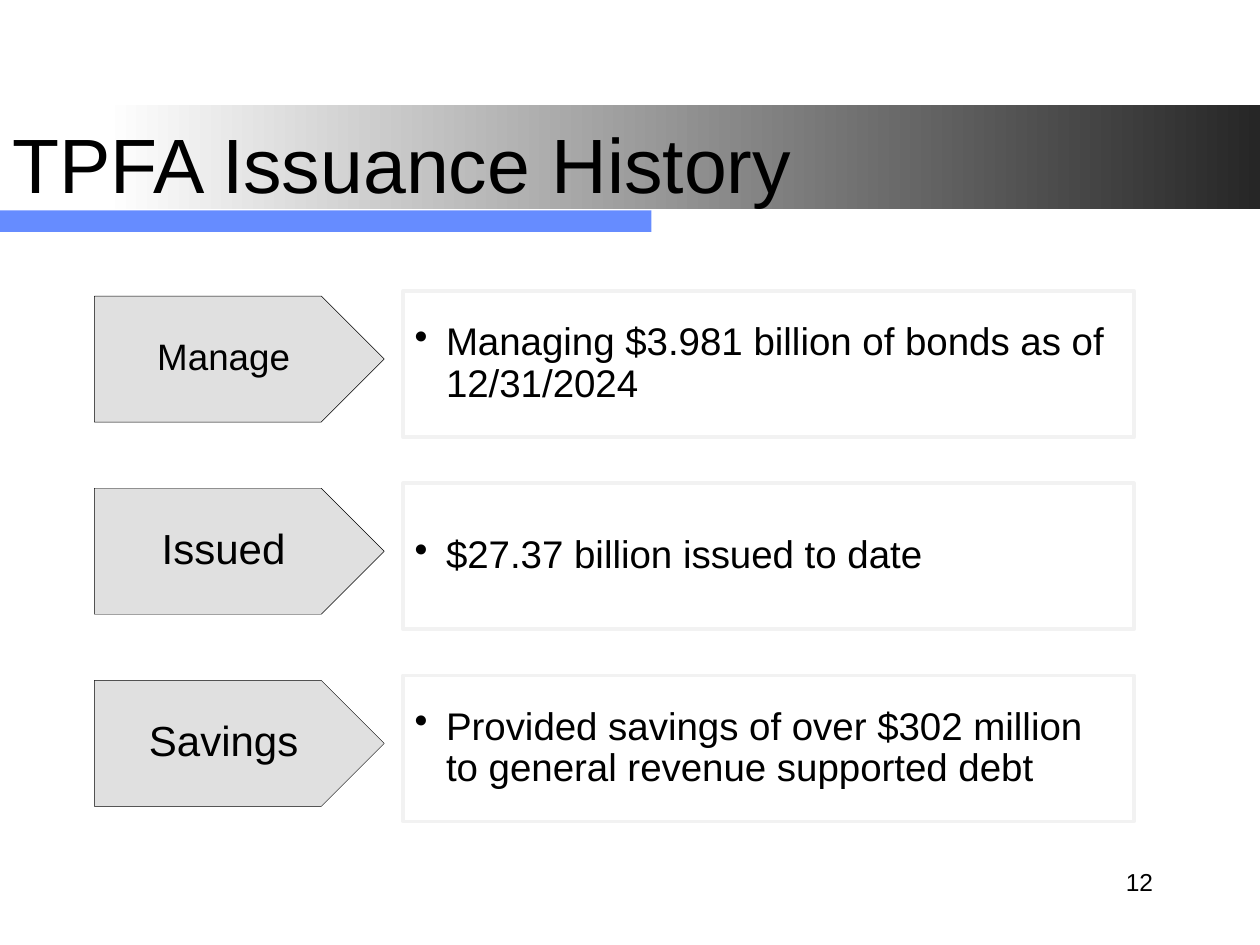
from dataclasses import dataclass

from lxml import etree
from pptx import Presentation
from pptx import util as u
from pptx.dml.color import RGBColor
from pptx.enum import shapes, text
from pptx.oxml import ns


@dataclass(frozen=True)
class Theme:
    font: str = "Arial"
    ink: RGBColor = RGBColor(0, 0, 0)
    band_start: RGBColor = RGBColor(0xFF, 0xFF, 0xFF)
    band_end: RGBColor = RGBColor(0x26, 0x26, 0x26)
    accent: RGBColor = RGBColor(0x33, 0x66, 0xFF)
    arrow: RGBColor = RGBColor(0x86, 0x86, 0x86)
    frame: RGBColor = RGBColor(0xF2, 0xF2, 0xF2)
    title_size: int = 44
    detail_size: int = 22
    number_size: int = 14


THEME = Theme()

# Label, label size, detail
HISTORY = [
    ("Manage", 21, "Managing $3.981 billion of bonds as of 12/31/2024"),
    ("Issued", 24, "$27.37 billion issued to date"),
    ("Savings", 24, "Provided savings of over $302 million to general revenue supported debt"),
]


def add_box(slide, preset, left, top, width, height):
    shape = slide.shapes.add_shape(
        preset, u.Inches(left), u.Inches(top), u.Inches(width), u.Inches(height))
    shape.shadow.inherit = False
    shape.line.fill.background()
    return shape


def fill_translucent(shape, color, opacity):
    shape.fill.solid()
    shape.fill.fore_color.rgb = color
    color_node = shape.element.spPr.find(ns.qn("a:solidFill"))[0]
    etree.SubElement(color_node, ns.qn("a:alpha"), val=str(opacity * 1000))


def set_line(shape, color, width):
    shape.line.color.rgb = color
    shape.line.width = u.Pt(width)


def write(shape, words, size, align, insets=(0.1, 0.05, 0.1, 0.05), wrap=True):
    frame = shape.text_frame
    frame.word_wrap = wrap
    frame.auto_size = text.MSO_AUTO_SIZE.NONE
    frame.vertical_anchor = text.MSO_ANCHOR.MIDDLE
    (frame.margin_left, frame.margin_top,
     frame.margin_right, frame.margin_bottom) = map(u.Inches, insets)
    paragraph = frame.paragraphs[0]
    paragraph.text = words
    paragraph.alignment = align
    paragraph.font.name = THEME.font
    paragraph.font.size = u.Pt(size)
    paragraph.font.color.rgb = THEME.ink
    return paragraph


def add_bullet(paragraph, indent):
    properties = paragraph._p.get_or_add_pPr()
    properties.set("marL", str(u.Inches(indent)))
    properties.set("indent", str(-u.Inches(indent)))
    etree.SubElement(properties, ns.qn("a:buChar"), char="•")


def add_header(slide, left, top, width, height):
    # Gradient band
    band = add_box(slide, shapes.MSO_SHAPE.RECTANGLE, 0.83, 0.83, 9.17, 0.83)
    band.fill.gradient()
    band.fill.gradient_angle = 0
    for stop, color in zip(band.fill.gradient_stops, (THEME.band_start, THEME.band_end)):
        stop.color.rgb = color

    # Accent bar
    bar = add_box(slide, shapes.MSO_SHAPE.RECTANGLE, 0, 1.67, 5.17, 0.17)
    fill_translucent(bar, THEME.accent, 75)

    # Title, raised above the band
    title = slide.shapes.title
    title.left, title.top = u.Inches(left), u.Inches(top)
    title.width, title.height = u.Inches(width), u.Inches(height)
    write(title, "TPFA Issuance History", THEME.title_size, text.PP_ALIGN.LEFT)
    title.element.getparent().append(title.element)


def add_history_row(slide, left, top, width, height, label, label_size, detail):
    arrow_width, arrow_height, gap = 2.3, 1, 0.15

    # Framed detail
    detail_left = arrow_width + gap
    frame = add_box(slide, shapes.MSO_SHAPE.RECTANGLE,
                    left + detail_left, top, width - detail_left, height)
    frame.fill.background()
    set_line(frame, THEME.frame, 2)
    paragraph = write(frame, detail, THEME.detail_size, text.PP_ALIGN.LEFT,
                      (0.09, 0.1, 0.15, 0.1))
    paragraph.line_spacing = 0.9
    add_bullet(paragraph, 0.25)

    # Arrow label
    arrow = add_box(slide, shapes.MSO_SHAPE.PENTAGON,
                    left, top + 0.04, arrow_width, arrow_height)
    fill_translucent(arrow, THEME.arrow, 25)
    set_line(arrow, THEME.ink, 0.25)
    paragraph = write(arrow, label, label_size, text.PP_ALIGN.CENTER,
                      (0.21, 0.14, 0.21, 0.14))
    paragraph.line_spacing = 0.9


def add_history(slide, left, top, width, height):
    row_height = 1.16
    pitch = (height - row_height) / (len(HISTORY) - 1)
    for index, row in enumerate(HISTORY):
        add_history_row(slide, left, top + index * pitch, width, row_height, *row)


def add_page_number(slide, left, top, width, height):
    box = slide.shapes.add_textbox(
        u.Inches(left), u.Inches(top), u.Inches(width), u.Inches(height))
    write(box, "12", THEME.number_size, text.PP_ALIGN.RIGHT, wrap=False)


def main():
    presentation = Presentation()
    presentation.slide_width = u.Inches(10)
    presentation.slide_height = u.Inches(7.5)
    slide = presentation.slides.add_slide(presentation.slide_layouts.get_by_name("Title Only"))
    add_header(slide, 0, 0.67, 9.25, 1.25)
    add_page_number(slide, 7.17, 6.75, 2.08, 0.5)
    add_history(slide, 0.75, 2.31, 8.25, 4.21)
    presentation.save("out.pptx")


if __name__ == "__main__":
    main()
